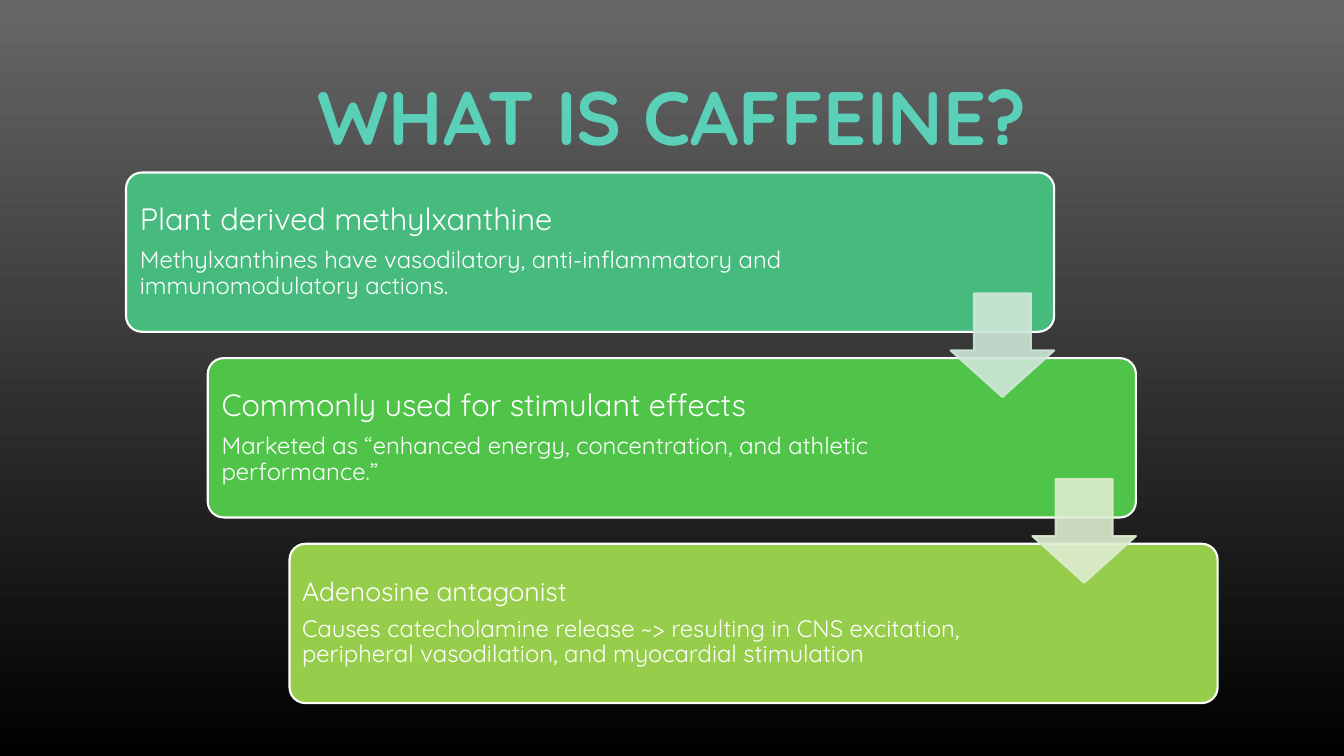
"""Build the slide that explains what caffeine is."""
import pptx
import pptx.dml.color
import pptx.enum.shapes
import pptx.enum.text
import pptx.oxml
import pptx.oxml.ns
import pptx.util

Pt = pptx.util.Pt
Shape = pptx.enum.shapes.MSO_SHAPE
Align = pptx.enum.text.PP_ALIGN
Anchor = pptx.enum.text.MSO_ANCHOR

COLORS = {
    "sky": "676767", "ground": "000000", "title": "5AD0B8", "white": "FFFFFF",
    "teal": "47BB7E", "green": "4FC449", "lime": "96CD4B",
    "pale teal": "CFE7D8", "pale green": "DDEDD0",
}
CARD_LEFT, CARD_TOP, CARD_WIDTH, CARD_HEIGHT = 90, 123.2, 663, 113.8
STEP_X, STEP_Y = 58.4, 132.6
TEXT_OFFSET = 3.3
ARROW_SIZE, ARROW_DROP = 74, 86.4

CARDS = [
    ("teal", 540, 6.6, 22, "Plant derived methylxanthine",
     "Methylxanthines have vasodilatory, anti-inflammatory and immunomodulatory actions."),
    ("green", 524, 6.6, 22, "Commonly used for stimulant effects",
     "Marketed as “enhanced energy, concentration, and athletic performance.”"),
    ("lime", 524, 5.7, 19, "Adenosine antagonist",
     "Causes catecholamine release ~> resulting in CNS excitation, "
     "peripheral vasodilation, and myocardial stimulation"),
]
ARROWS = ["pale teal", "pale green"]


class SlideBuilder:
    """Hold the style and the current slide."""

    def __init__(self, slide, font_name):
        """Remember the slide and its font."""
        self.slide = slide
        self.font_name = font_name

    def color(self, name):
        """Return a named colour."""
        return pptx.dml.color.RGBColor.from_string(COLORS[name])

    def format_font(self, paragraph, size, color, bold=False):
        """Set the font of a whole paragraph."""
        font = paragraph.font
        font.name, font.size, font.bold = self.font_name, Pt(size), bold
        font.color.rgb = self.color(color)

    def background(self, *names):
        """Fill the background from top to bottom."""
        fill = self.slide.background.fill
        fill.gradient()
        fill.gradient_angle = 270
        for stop, name in zip(fill.gradient_stops, names):
            stop.color.rgb = self.color(name)

    def title(self, text, left, top, width, height):
        """Place and format the title."""
        title = self.slide.shapes.title
        title.left, title.top = Pt(left), Pt(top)
        title.width, title.height = Pt(width), Pt(height)
        frame = title.text_frame
        frame.text = text
        frame.vertical_anchor = Anchor.MIDDLE
        frame.paragraphs[0].alignment = Align.CENTER
        self.format_font(frame.paragraphs[0], 54, "title", True)

    def shape(self, kind, left, top, width, height, adjustments, fill, line, opacity=100):
        """Add a filled and outlined preset shape."""
        shape = self.slide.shapes.add_shape(kind, Pt(left), Pt(top), Pt(width), Pt(height))
        shape.shadow.inherit = False
        for index, value in enumerate(adjustments):
            shape.adjustments[index] = value
        shape.fill.solid()
        shape.fill.fore_color.rgb = self.color(fill)
        shape.line.color.rgb = self.color(line)
        shape.line.width = Pt(1.5)
        if opacity < 100:
            for element in shape.fill._xPr.iter(pptx.oxml.ns.qn("a:srgbClr")):
                alpha = pptx.oxml.parse_xml(
                    f'<a:alpha {pptx.oxml.ns.nsdecls("a")} val="{opacity * 1000}"/>')
                element.append(alpha)

    def text(self, left, top, width, height, inset, lines):
        """Add a text box with one paragraph per line of text and size."""
        box = self.slide.shapes.add_textbox(Pt(left), Pt(top), Pt(width), Pt(height))
        frame = box.text_frame
        frame.word_wrap = True
        frame.vertical_anchor = Anchor.MIDDLE
        frame.margin_left = frame.margin_right = Pt(inset)
        frame.margin_top = frame.margin_bottom = Pt(inset)
        for index, (text, size) in enumerate(lines):
            paragraph = frame.add_paragraph() if index else frame.paragraphs[0]
            paragraph.text = text
            paragraph.line_spacing = 0.9
            paragraph.space_after = Pt(round(size * 0.35, 1))
            self.format_font(paragraph, size, "white")

    def card(self, index, color, text_width, inset, size, heading, detail):
        """Add one step of the staircase with its text."""
        left, top = CARD_LEFT + index * STEP_X, CARD_TOP + index * STEP_Y
        self.shape(Shape.ROUNDED_RECTANGLE, left, top, CARD_WIDTH, CARD_HEIGHT,
                   [0.1], color, "white")
        self.text(left + TEXT_OFFSET, top + TEXT_OFFSET, text_width,
                  CARD_HEIGHT - 2 * TEXT_OFFSET, inset, [(heading, size), (detail, 17)])

    def arrow(self, index, color):
        """Add the arrow from one step to the next."""
        left = CARD_LEFT + index * STEP_X + CARD_WIDTH - ARROW_SIZE
        top = CARD_TOP + index * STEP_Y + ARROW_DROP
        self.shape(Shape.DOWN_ARROW, left, top, ARROW_SIZE, ARROW_SIZE,
                   [0.55, 0.45], color, color, 90)


def main():
    """Build and save the presentation."""
    presentation = pptx.Presentation()
    presentation.slide_width, presentation.slide_height = Pt(960), Pt(540)
    slide = presentation.slides.add_slide(presentation.slide_layouts[5])
    builder = SlideBuilder(slide, "Quicksand")
    builder.background("sky", "ground")
    builder.title("WHAT IS CAFFEINE?", 90, 30, 780, 104)
    for index, card in enumerate(CARDS):
        builder.card(index, *card)
    for index, color in enumerate(ARROWS):
        builder.arrow(index, color)
    presentation.save("out.pptx")


if __name__ == "__main__":
    main()
